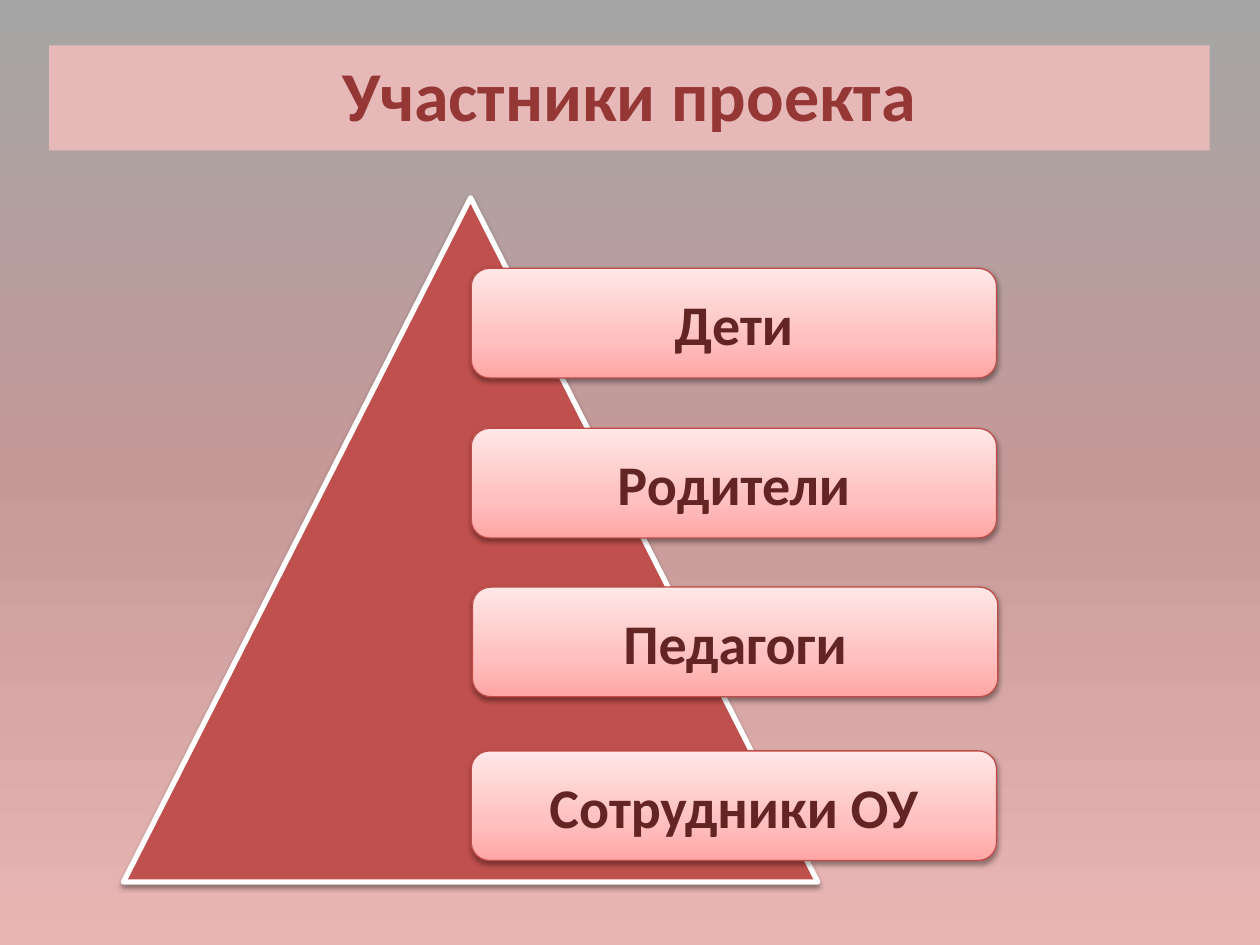
"""Build the project participants slide: a triangle with four labelled boxes."""
from dataclasses import dataclass

from lxml.etree import SubElement
from pptx import Presentation
from pptx.dml.color import RGBColor
from pptx.enum.shapes import MSO_SHAPE
from pptx.enum.text import MSO_ANCHOR, MSO_AUTO_SIZE, PP_ALIGN
from pptx.oxml.ns import qn
from pptx.util import Inches, Pt

FONT = "Calibri"
WHITE = RGBColor(0xFF, 0xFF, 0xFF)
BLACK = RGBColor(0x00, 0x00, 0x00)
RED = RGBColor(0xC0, 0x50, 0x4D)
BOX_LINE = RGBColor(0xBF, 0x4C, 0x48)
BOX_TEXT = RGBColor(0x63, 0x25, 0x23)
TITLE_FILL = RGBColor(0xE6, 0xB9, 0xB8)
TITLE_TEXT = RGBColor(0x95, 0x37, 0x35)
BACKGROUND_STOPS = [
    (0, RGBColor(0xA6, 0xA6, 0xA6)),
    (50, RGBColor(0xC5, 0x99, 0x98)),
    (100, RGBColor(0xE9, 0xB6, 0xB4)),
]
BOX_STOPS = [
    (0, RGBColor(0xFF, 0xA6, 0xA5)),
    (35, RGBColor(0xFF, 0xC0, 0xBF)),
    (100, RGBColor(0xFF, 0xE7, 0xE7)),
]


@dataclass
class Participant:
    name: str
    top: float
    left: float = 3.74


PARTICIPANTS = [
    Participant("Дети", 2.13),
    Participant("Родители", 3.4),
    Participant("Педагоги", 4.66, 3.75),
    Participant("Сотрудники ОУ", 5.96),
]


def set_gradient(fill, element, stops: list, angle: int) -> None:
    fill.gradient()
    grad = element.find(".//" + qn("a:gradFill"))
    gs_list = grad.find(qn("a:gsLst"))
    gs_list.clear()
    for position, color in stops:
        gs = SubElement(gs_list, qn("a:gs"), pos=str(position * 1000))
        SubElement(gs, qn("a:srgbClr"), val=str(color))
    grad.find(qn("a:lin")).set("ang", str(angle * 60000))


def add_shadow(sp) -> None:
    sp.shadow.inherit = False
    effects = sp.element.spPr.find(qn("a:effectLst"))
    shadow = SubElement(effects, qn("a:outerShdw"), blurRad=str(Pt(3.1)),
                        dist=str(Pt(1.6)), dir="5400000", rotWithShape="0")
    color = SubElement(shadow, qn("a:srgbClr"), val=str(BLACK))
    SubElement(color, qn("a:alpha"), val="38000")


def set_text(sp, text: str, size: int, color: RGBColor) -> None:
    p = sp.text_frame.paragraphs[0]
    p.text = text
    p.alignment = PP_ALIGN.CENTER
    font = p.runs[0].font
    font.name, font.size, font.bold = FONT, Pt(size), True
    font.color.rgb = color


def add_triangle(s) -> None:
    sp = s.shapes.add_shape(MSO_SHAPE.ISOSCELES_TRIANGLE, Inches(0.98),
                            Inches(1.57), Inches(5.51), Inches(5.43))
    sp.fill.solid()
    sp.fill.fore_color.rgb = RED
    sp.line.color.rgb = WHITE
    sp.line.width = Pt(3)
    add_shadow(sp)


def add_box(s, participant: Participant) -> None:
    sp = s.shapes.add_shape(MSO_SHAPE.ROUNDED_RECTANGLE, Inches(participant.left),
                            Inches(participant.top), Inches(4.17), Inches(0.87))
    set_gradient(sp.fill, sp.element, BOX_STOPS, 270)
    sp.line.color.rgb = BOX_LINE
    sp.line.width = Pt(0.75)
    add_shadow(sp)
    sp.text_frame.vertical_anchor = MSO_ANCHOR.MIDDLE
    set_text(sp, participant.name, 32, BOX_TEXT)


def format_title(s) -> None:
    title = s.shapes.title
    title.left, title.top = Inches(0.39), Inches(0.36)
    title.width, title.height = Inches(9.21), Inches(0.77)
    title.fill.solid()
    title.fill.fore_color.rgb = TITLE_FILL
    tf = title.text_frame
    tf.word_wrap = True
    tf.auto_size = MSO_AUTO_SIZE.SHAPE_TO_FIT_TEXT
    tf.vertical_anchor = MSO_ANCHOR.TOP
    set_text(title, "Участники проекта", 40, TITLE_TEXT)


def main() -> None:
    prs = Presentation()
    prs.slide_width, prs.slide_height = Inches(10), Inches(7.5)
    s = prs.slides.add_slide(prs.slide_layouts[5])
    set_gradient(s.background.fill, s.element, BACKGROUND_STOPS, 90)
    format_title(s)
    add_triangle(s)
    for participant in PARTICIPANTS:
        add_box(s, participant)
    prs.save("out.pptx")


if __name__ == "__main__":
    main()
